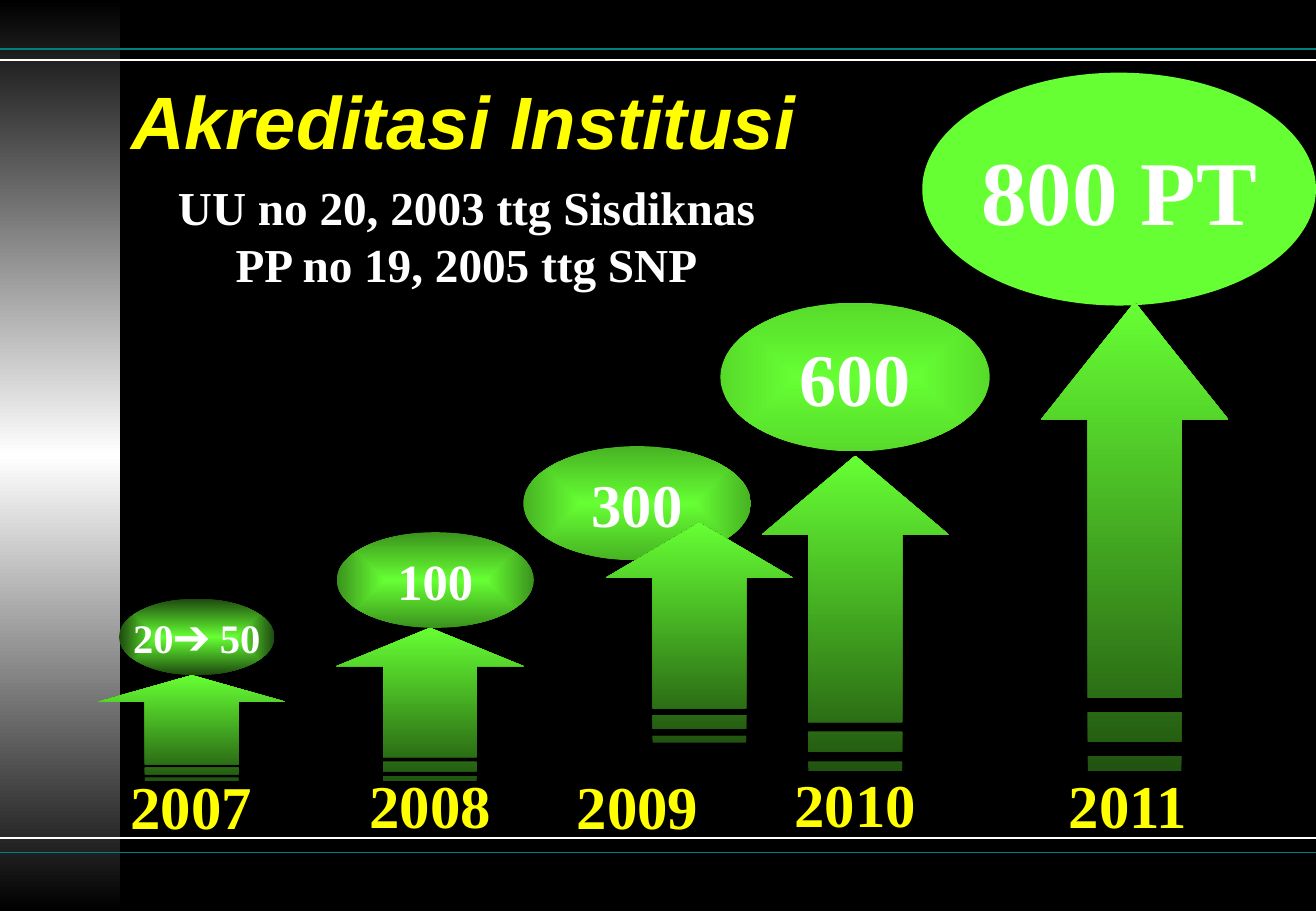
"""Build the slide on the growth of institutional accreditation, 2007 to 2011."""
from dataclasses import dataclass

from pptx import Presentation
from pptx.dml.color import RGBColor
from pptx.enum.shapes import MSO_CONNECTOR, MSO_SHAPE
from pptx.enum.text import MSO_ANCHOR, PP_ALIGN
from pptx.oxml import parse_xml
from pptx.oxml.ns import nsdecls, qn
from pptx.shapes.autoshape import Shape
from pptx.slide import Slide
from pptx.text.text import TextFrame
from pptx.util import Cm, Pt

BLACK = RGBColor(0x00, 0x00, 0x00)
WHITE = RGBColor(0xFF, 0xFF, 0xFF)
TEAL = RGBColor(0x00, 0x80, 0x80)
YELLOW = RGBColor(0xFF, 0xFF, 0x00)
GREEN = RGBColor(0x66, 0xFF, 0x33)

SLIDE_WIDTH, SLIDE_HEIGHT = 27.51, 19.05
ARROW_WIDTH = 3.91
ARROW_SHADE = 33
LINEAR = '<a:lin ang="{}" scaled="1"/>'
CENTRED = ('<a:path path="shape"><a:fillToRect l="50000" t="50000" '
           'r="50000" b="50000"/></a:path>')


@dataclass(frozen=True)
class Frame:
    """A rectangle in centimetres."""
    left: float
    top: float
    width: float
    height: float

    def lengths(self) -> tuple[Cm, Cm, Cm, Cm]:
        """Return the rectangle as slide lengths."""
        return Cm(self.left), Cm(self.top), Cm(self.width), Cm(self.height)


@dataclass(frozen=True)
class Style:
    """How a text is set."""
    size: int
    color: RGBColor
    font: str = "Times New Roman"
    italic: bool = False
    align: PP_ALIGN = PP_ALIGN.LEFT


@dataclass(frozen=True)
class Rule:
    """A horizontal line across the slide."""
    top: float
    color: RGBColor


@dataclass(frozen=True)
class Stop:
    """A gradient stop, with its shade in percent."""
    position: int
    color: RGBColor
    shade: int = 100


@dataclass(frozen=True)
class Milestone:
    """One year with its target bubble and its arrow."""
    year: str
    year_left: float
    year_top: float
    target: str
    size: int
    bubble: Frame
    shade: int
    arrow_center: float
    arrow_tip: float
    arrow_length: float


RULES = [Rule(1.02, TEAL), Rule(1.25, WHITE), Rule(17.53, WHITE), Rule(17.83, TEAL)]

MILESTONES = [
    Milestone("2007", 2.48, 15.95, "20➔ 50", 24,
              Frame(2.49, 12.52, 3.25, 1.6), 29, 4.01, 14.12, 2.21),
    Milestone("2008", 7.47, 15.93, "100", 30,
              Frame(7.04, 11.13, 4.12, 2), 58, 8.99, 13.13, 3.2),
    Milestone("2009", 11.81, 15.95, "300", 36,
              Frame(10.94, 9.33, 4.76, 2.39), 70, 14.62, 10.93, 4.6),
    Milestone("2010", 16.36, 15.9, "600", 44,
              Frame(15.06, 6.33, 5.63, 3.11), 86, 17.88, 9.53, 6.6),
    Milestone("2011", 22.09, 15.93, "800 PT", 54,
              Frame(19.28, 1.52, 8.23, 4.87), 100, 23.72, 6.32, 9.8),
]


def fill_gradient(shape: Shape, stops: list[Stop], direction: str) -> None:
    """Fill a shape with a gradient."""
    marks = ""
    for stop in stops:
        shade = f'<a:gamma/><a:shade val="{stop.shade * 1000}"/><a:invGamma/>'
        marks += (f'<a:gs pos="{stop.position * 1000}"><a:srgbClr val="{stop.color}">'
                  f'{shade if stop.shade < 100 else ""}</a:srgbClr></a:gs>')
    shape.fill.background()
    properties = shape._element.spPr
    properties.replace(properties.find(qn("a:noFill")), parse_xml(
        f'<a:gradFill rotWithShape="1" {nsdecls("a")}>'
        f'<a:gsLst>{marks}</a:gsLst>{direction}</a:gradFill>'))


def strip_outline(shape: Shape) -> None:
    """Remove the line and the shadow of a shape."""
    shape.line.fill.background()
    shape.shadow.inherit = False


def set_text(frame: TextFrame, text: str, style: Style) -> None:
    """Write and format a text."""
    frame.text = text
    for para in frame.paragraphs:
        para.alignment = style.align
        for span in para.runs:
            span.font.name = style.font
            span.font.size = Pt(style.size)
            span.font.bold = True
            span.font.italic = style.italic
            span.font.color.rgb = style.color


def add_text(page: Slide, frame: Frame, text: str, style: Style,
             wrap: bool = True) -> TextFrame:
    """Add a text box."""
    box = page.shapes.add_textbox(*frame.lengths())
    box.text_frame.word_wrap = wrap
    set_text(box.text_frame, text, style)
    return box.text_frame


def add_rule(page: Slide, rule: Rule) -> None:
    """Add a horizontal line across the slide."""
    line = page.shapes.add_connector(MSO_CONNECTOR.STRAIGHT, Cm(0), Cm(rule.top),
                                     Cm(SLIDE_WIDTH), Cm(rule.top))
    line.line.color.rgb = rule.color
    line.line.width = Pt(1)
    line._element.spPr.append(parse_xml(f'<a:effectLst {nsdecls("a")}/>'))


def add_bubble(page: Slide, item: Milestone) -> None:
    """Add the ellipse that holds a target."""
    bubble = page.shapes.add_shape(MSO_SHAPE.OVAL, *item.bubble.lengths())
    strip_outline(bubble)
    if item.shade < 100:
        fill_gradient(bubble, [Stop(0, GREEN), Stop(100, GREEN, item.shade)], CENTRED)
    else:
        bubble.fill.solid()
        bubble.fill.fore_color.rgb = GREEN
    bubble.text_frame.word_wrap = False
    bubble.text_frame.vertical_anchor = MSO_ANCHOR.MIDDLE
    set_text(bubble.text_frame, item.target,
             Style(item.size, WHITE, align=PP_ALIGN.CENTER))


def add_arrow(page: Slide, item: Milestone) -> None:
    """Add an upward arrow with a striped tail."""
    left = item.arrow_center - item.arrow_length / 2
    top = item.arrow_tip + (item.arrow_length - ARROW_WIDTH) / 2

    def point(along: float, across: float) -> tuple[Cm, Cm]:
        """Place a point given as fractions of the arrow."""
        return Cm(left + along * item.arrow_length), Cm(top + across * ARROW_WIDTH)

    head = [(0.75, 0), (0.75, 0.25), (5 / 32, 0.25), (5 / 32, 0.75),
            (0.75, 0.75), (0.75, 1), (1, 0.5)]
    stripes = [[(start, 0.25), (end, 0.25), (end, 0.75), (start, 0.75)]
               for start, end in ((2 / 32, 4 / 32), (0, 1 / 32))]
    builder = page.shapes.build_freeform(*point(*head[0]))
    builder.add_line_segments([point(*spot) for spot in head[1:]])
    for stripe in stripes:
        builder.move_to(*point(*stripe[0]))
        builder.add_line_segments([point(*spot) for spot in stripe[1:]])
    arrow = builder.convert_to_shape()
    arrow.rotation = 270
    strip_outline(arrow)
    fill_gradient(arrow, [Stop(0, GREEN, ARROW_SHADE), Stop(100, GREEN)],
                  LINEAR.format(0))


def main() -> None:
    """Build and save the deck."""
    deck = Presentation()
    deck.slide_width, deck.slide_height = Cm(SLIDE_WIDTH), Cm(SLIDE_HEIGHT)
    page = deck.slides.add_slide(deck.slide_layouts[6])
    page.background.fill.solid()
    page.background.fill.fore_color.rgb = BLACK

    band = page.shapes.add_shape(MSO_SHAPE.RECTANGLE,
                                 *Frame(0, 0, 2.52, SLIDE_HEIGHT).lengths())
    strip_outline(band)
    fill_gradient(band, [Stop(0, BLACK), Stop(50, WHITE), Stop(100, BLACK)],
                  LINEAR.format(5400000))
    for rule in RULES:
        add_rule(page, rule)

    title = add_text(page, Frame(2.49, 0.91, 23.39, 3.18), "Akreditasi Institusi",
                     Style(44, YELLOW, "Arial", italic=True))
    laws = add_text(page, Frame(3.58, 2.72, 12.34, 4.39),
                    "UU no 20, 2003 ttg Sisdiknas\nPP no 19, 2005 ttg SNP",
                    Style(28, WHITE, align=PP_ALIGN.CENTER), wrap=False)
    laws.margin_left = laws.margin_right = Cm(0)
    title.vertical_anchor = laws.vertical_anchor = MSO_ANCHOR.MIDDLE

    for item in MILESTONES:
        add_bubble(page, item)
        add_text(page, Frame(item.year_left, item.year_top, 3.68, 1.78),
                 item.year, Style(36, YELLOW))
        add_arrow(page, item)
    deck.save("out.pptx")


if __name__ == "__main__":
    main()
